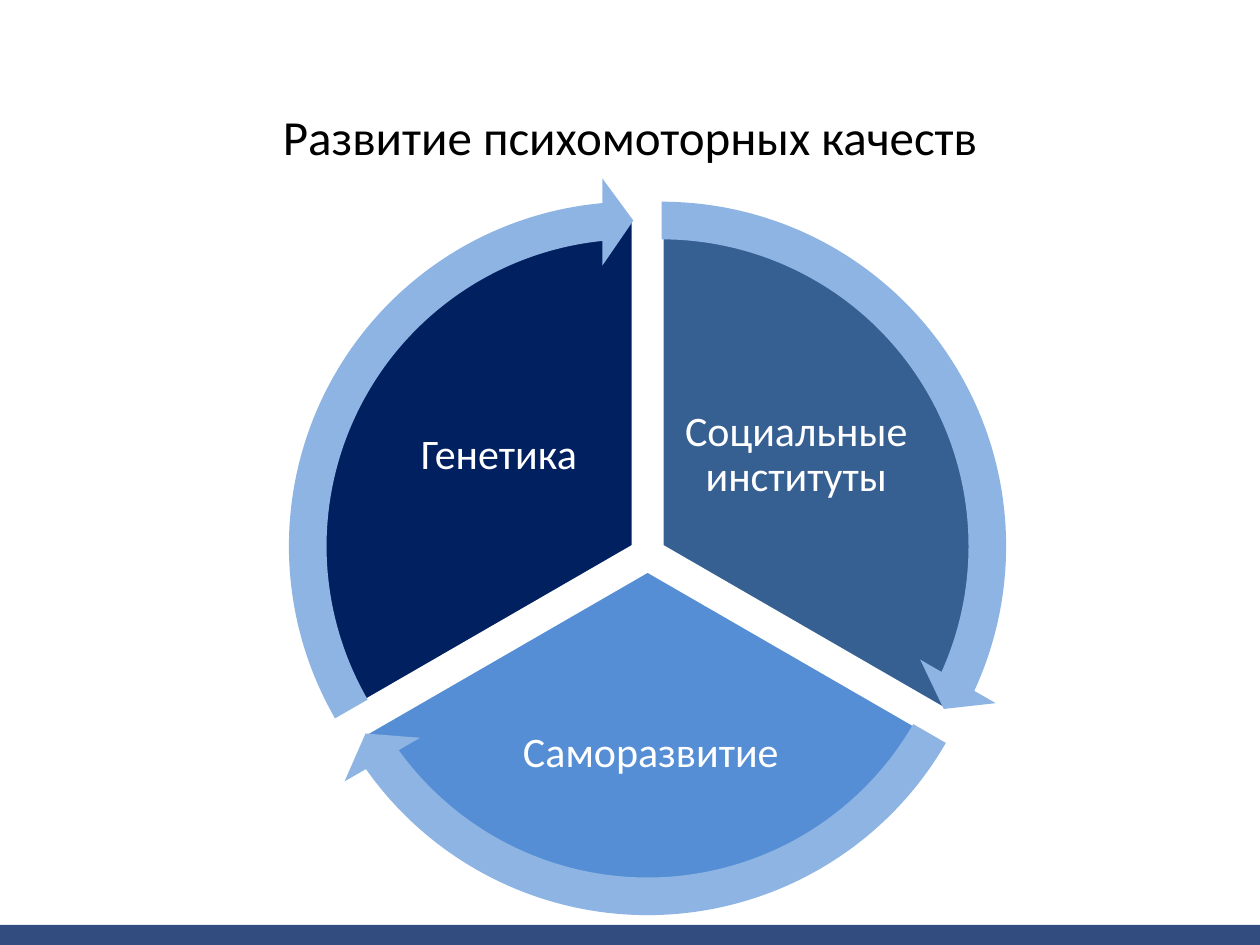
from math import cos, radians, sin

from lxml import etree
from pptx import Presentation
from pptx.dml.color import RGBColor
from pptx.enum.shapes import MSO_SHAPE
from pptx.enum.text import MSO_ANCHOR, PP_ALIGN
from pptx.oxml.ns import qn
from pptx.util import Inches, Pt

RECTANGLE, PIE, ARROW = MSO_SHAPE.RECTANGLE, MSO_SHAPE.PIE, MSO_SHAPE.CIRCULAR_ARROW
CENTER, MIDDLE = PP_ALIGN.CENTER, MSO_ANCHOR.MIDDLE

WIDTH, HEIGHT = 10, 7.5
COLORS = {"navy": "002060", "steel": "376092", "blue": "558ED5",
          "light": "8EB4E3", "white": "FFFFFF", "black": "000000"}
TITLE = "Развитие психомоторных качеств"

# Label, fill, start angle in degrees clockwise from the right, label box
SECTORS = [
    ("Социальные институты", "steel", 270, (5.39, 2.84, 1.86, 1.55)),
    ("Саморазвитие", "blue", 30, (3.77, 5.3, 2.79, 1.37)),
    ("Генетика", "navy", 150, (3.03, 2.84, 1.86, 1.55)),
]
HUB = (5.14, 4.4)
SPREAD = 0.13  # distance of each sector's centre from the hub
PIE_SIZE, ARROW_SIZE = 5.21, 5.86
SWEEP = 360 / len(SECTORS)
ANGLE_UNIT = 0.6  # adjustment units in one degree
ARROW_THICKNESS, ARROW_HEAD, ARROW_REACH = 0.051, 3.275, 0.059


def color(name):
    return RGBColor.from_string(COLORS[name])


def add_filled(page, kind, place, fill, adjustments=()):
    shape = page.shapes.add_shape(kind, *map(Inches, place))
    shape.shadow.inherit = False
    shape.fill.solid()
    shape.fill.fore_color.rgb = color(fill)
    shape.line.fill.background()
    for index, value in enumerate(adjustments):
        shape.adjustments[index] = value
    return shape


def add_text(page, place, text, size, ink, frame_format, spacing=1.0):
    frame = page.shapes.add_textbox(*map(Inches, place)).text_frame
    for name, value in frame_format.items():
        setattr(frame, name, value)
    para = frame.paragraphs[0]
    para.alignment, para.line_spacing = CENTER, spacing
    span = para.add_run()
    span.text = text
    font_format = {"name": "Calibri", "size": Pt(size)}
    for name, value in font_format.items():
        setattr(span.font, name, value)
    span.font.color.rgb = color(ink)


def centered_square(center, size):
    return center[0] - size / 2, center[1] - size / 2, size, size


def sector_geometry(start):
    """Return the sector's centre and its start and end as adjustments."""
    middle = radians(start + SWEEP / 2)
    center = HUB[0] + SPREAD * cos(middle), HUB[1] + SPREAD * sin(middle)
    return center, start * ANGLE_UNIT, (start + SWEEP) % 360 * ANGLE_UNIT


def main():
    deck = Presentation()
    deck.slide_width, deck.slide_height = Inches(WIDTH), Inches(HEIGHT)
    page = deck.slides.add_slide(deck.slide_layouts[6])

    footer = add_filled(page, RECTANGLE, (-0.12, 7.34, 10.24, 0.16), "navy")
    tint = footer.fill._xPr.find(qn("a:solidFill"))[0]
    etree.SubElement(tint, qn("a:alpha")).set("val", "80000")

    add_text(page, (0, 0.8, WIDTH, 0.57), TITLE, 28, "black", {"word_wrap": True})

    margins = {f"margin_{side}": Inches(0.03)
               for side in ("left", "top", "right", "bottom")}
    label_format = {"word_wrap": True, "vertical_anchor": MIDDLE, **margins}
    for label, fill, start, label_place in SECTORS:
        center, begin, end = sector_geometry(start)
        sector = add_filled(page, PIE, centered_square(center, PIE_SIZE), fill, (begin, end))
        sector.line.color.rgb = color("white")
        sector.line.width = Pt(2)
        add_text(page, label_place, label, 24, "white", label_format, 0.9)

    for _, _, start, _ in SECTORS:
        center, begin, end = sector_geometry(start)
        add_filled(page, ARROW, centered_square(center, ARROW_SIZE), "light",
                   (ARROW_THICKNESS, ARROW_HEAD, end - ARROW_HEAD, begin, ARROW_REACH))

    deck.save("out.pptx")


if __name__ == "__main__":
    main()
